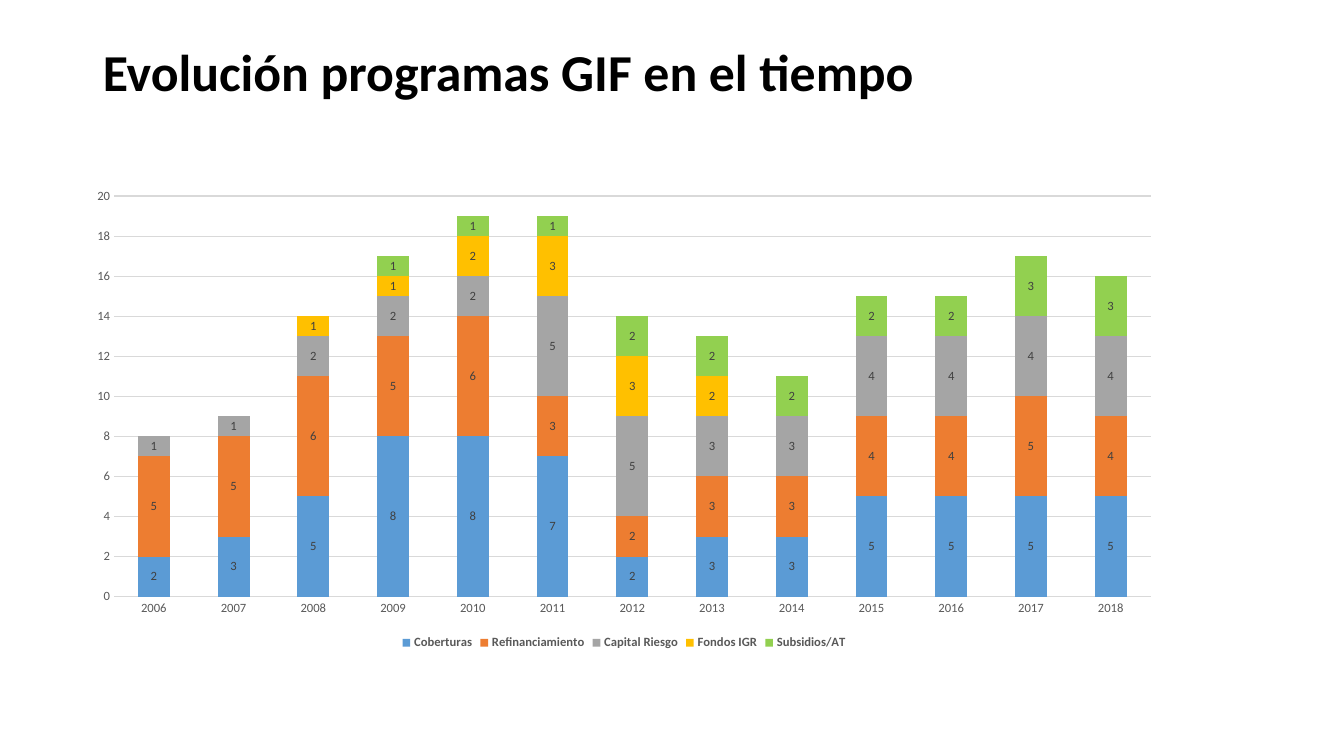
from lxml import etree
from pptx import Presentation
from pptx.chart.data import CategoryChartData
from pptx.dml.color import RGBColor
from pptx.enum.chart import (XL_CHART_TYPE, XL_LABEL_POSITION,
                             XL_LEGEND_POSITION, XL_TICK_MARK)
from pptx.enum.text import MSO_ANCHOR, MSO_AUTO_SIZE, PP_ALIGN
from pptx.oxml.ns import qn
from pptx.util import Inches, Pt

FONT = "Calibri"
COLOURS = {
    "title": "000000",
    "axis_text": "595959",
    "label_text": "404040",
    "grid": "D9D9D9",
    "Coberturas": "5B9BD5",
    "Refinanciamiento": "ED7D31",
    "Capital Riesgo": "A5A5A5",
    "Fondos IGR": "FFC000",
    "Subsidios/AT": "92D050",
}
YEARS = [str(year) for year in range(2006, 2019)]
PROGRAMMES = {
    "Coberturas": [2, 3, 5, 8, 8, 7, 2, 3, 3, 5, 5, 5, 5],
    "Refinanciamiento": [5, 5, 6, 5, 6, 3, 2, 3, 3, 4, 4, 5, 4],
    "Capital Riesgo": [1, 1, 2, 2, 2, 5, 5, 3, 3, 4, 4, 4, 4],
    "Fondos IGR": [None] * 2 + [1, 1, 2, 3, 3, 2] + [None] * 5,
    "Subsidios/AT": [None] * 3 + [1, 1, 1, 2, 2, 2, 2, 2, 3, 3],
}


def colour(name):
    return RGBColor.from_string(COLOURS[name])


def style_font(font, size, colour_name, bold=False):
    font.name = FONT
    font.size = Pt(size)
    font.bold = bold
    font.color.rgb = colour(colour_name)


def style_grid_line(line):
    line.color.rgb = colour("grid")
    line.width = Pt(0.75)


def add_title(slide, text):
    title = slide.shapes.title
    title.left, title.top = Inches(0.92), Inches(0.41)
    title.width, title.height = Inches(10.24), Inches(0.67)
    frame = title.text_frame
    frame.text = text
    frame.word_wrap = True
    frame.auto_size = MSO_AUTO_SIZE.NONE
    frame.vertical_anchor = MSO_ANCHOR.MIDDLE
    paragraph = frame.paragraphs[0]
    paragraph.alignment = PP_ALIGN.LEFT
    paragraph.line_spacing = 0.9
    style_font(paragraph.runs[0].font, 37, "title", bold=True)


def set_plot_layout(chart, **fractions):
    """Fix the inner plot area, given as fractions of the chart frame."""
    plot_area = chart._chartSpace.chart.plotArea
    for old_layout in plot_area.findall(qn("c:layout")):
        plot_area.remove(old_layout)
    layout = etree.Element(qn("c:layout"))
    manual = etree.SubElement(layout, qn("c:manualLayout"))
    settings = {"layoutTarget": "inner", "xMode": "edge", "yMode": "edge",
                **fractions}
    for tag, value in settings.items():
        etree.SubElement(manual, qn(f"c:{tag}")).set("val", str(value))
    plot_area.insert(0, layout)


def style_axes(chart):
    years, counts = chart.category_axis, chart.value_axis
    for axis in (years, counts):
        axis.major_tick_mark = XL_TICK_MARK.NONE
        axis.minor_tick_mark = XL_TICK_MARK.NONE
        style_font(axis.tick_labels.font, 9, "axis_text")
    style_grid_line(years.format.line)
    counts.format.line.fill.background()
    counts.minimum_scale, counts.maximum_scale = 0, 20
    counts.major_unit = 2
    counts.has_major_gridlines = True
    style_grid_line(counts.major_gridlines.format.line)


def style_series(series):
    series.format.fill.solid()
    series.format.fill.fore_color.rgb = colour(series.name)
    series.invert_if_negative = False
    labels = series.data_labels
    labels.show_value = True
    labels.position = XL_LABEL_POSITION.CENTER
    style_font(labels.font, 9, "label_text")


def add_programme_chart(slide):
    data = CategoryChartData(number_format="General")
    data.categories = YEARS
    for name, values in PROGRAMMES.items():
        data.add_series(name, values)
    chart = slide.shapes.add_chart(
        XL_CHART_TYPE.COLUMN_STACKED, Inches(0.75), Inches(1.78),
        Inches(10.88), Inches(4.71), data).chart
    chart.has_title = False
    style_font(chart.font, 10, "title")
    plot = chart.plots[0]
    plot.gap_width, plot.overlap = 150, 100
    plot.vary_by_categories = False
    for series in plot.series:
        style_series(series)
    style_axes(chart)
    chart.has_legend = True
    chart.legend.position = XL_LEGEND_POSITION.BOTTOM
    chart.legend.include_in_layout = False
    style_font(chart.legend.font, 9, "axis_text", bold=True)
    set_plot_layout(chart, x=0.035, y=0.035, w=0.945, h=0.844)


def main():
    deck = Presentation()
    deck.slide_width, deck.slide_height = Inches(13.33), Inches(7.5)
    title_only = deck.slide_layouts[5]
    slide = deck.slides.add_slide(title_only)
    add_title(slide, "Evolución programas GIF en el tiempo")
    add_programme_chart(slide)
    deck.save("out.pptx")


if __name__ == "__main__":
    main()
